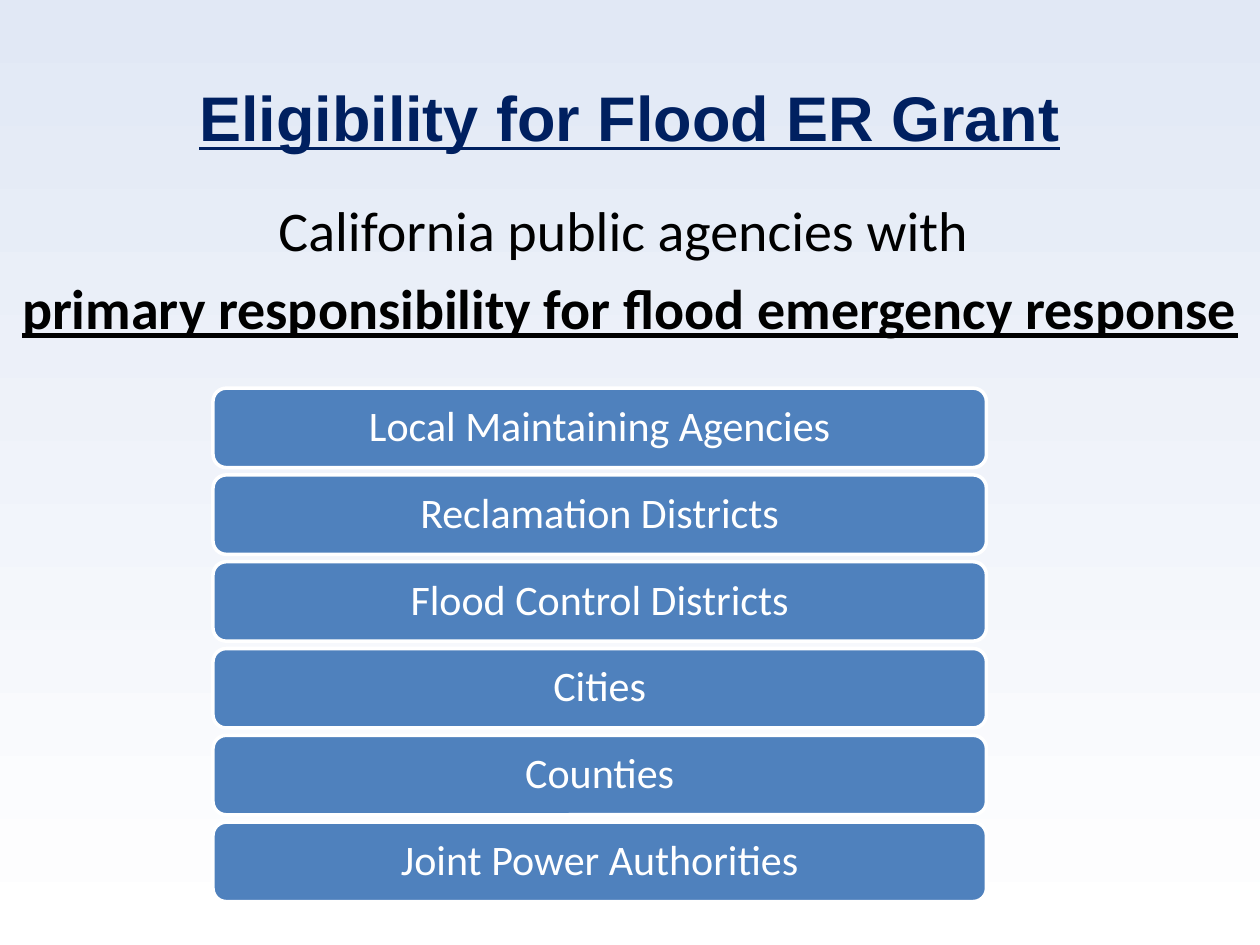
from pptx import Presentation
from pptx.dml.color import RGBColor
from pptx.enum import shapes, text
from pptx.util import Pt


def color(code):
    return RGBColor.from_string(code)


def style(para, font, size, code, bold=False):
    """Centre the paragraph; bold text is also underlined."""
    para.alignment = text.PP_ALIGN.CENTER
    for run in para.runs:
        face = run.font
        face.name, face.size = font, Pt(size)
        face.bold = face.underline = bold
        face.color.rgb = color(code)


deck = Presentation()
deck.slide_width, deck.slide_height = Pt(720), Pt(540)
slide = deck.slides.add_slide(deck.slide_layouts[6])

# Background
back = slide.background.fill
back.gradient()
back.gradient_angle = 270
for stop, code in zip(back.gradient_stops, ("E1E8F5", "FFFFFF")):
    stop.color.rgb = color(code)
    stop.position = 0 if code == "E1E8F5" else 1

# Title
title = slide.shapes.add_textbox(Pt(36), Pt(21.6), Pt(648), Pt(90)).text_frame
title.word_wrap = True
title.vertical_anchor = text.MSO_ANCHOR.MIDDLE
title.text = "Eligibility for Flood ER Grant"
style(title.paragraphs[0], "Arial", 36, "002060", True)

# Introduction
intro = slide.shapes.add_textbox(Pt(0), Pt(108), Pt(720), Pt(120)).text_frame
intro.word_wrap = True
intro.text = ("California public agencies with \n"
              "primary responsibility for flood emergency response")
for para, bold in zip(intro.paragraphs, (False, True)):
    style(para, "Calibri", 32, "000000", bold)
    para.space_before = Pt(6.4)

# Eligible agencies
names = ["Local Maintaining Agencies", "Reclamation Districts",
         "Flood Control Districts", "Cities", "Counties",
         "Joint Power Authorities"]
top, step = 221.8, 49.6
for i, name in enumerate(names):
    bar = slide.shapes.add_shape(shapes.MSO_SHAPE.ROUNDED_RECTANGLE,
                                 Pt(121.7), Pt(top + i * step), Pt(442), Pt(45.4))
    bar.shadow.inherit = False
    bar.fill.solid()
    bar.fill.fore_color.rgb = color("4F81BD")
    bar.line.color.rgb = color("FFFFFF")
    bar.line.width = Pt(2)
    frame = bar.text_frame
    frame.word_wrap = True
    frame.vertical_anchor = text.MSO_ANCHOR.MIDDLE
    frame.margin_top = frame.margin_bottom = Pt(7.2)
    frame.text = name
    para = frame.paragraphs[0]
    para.line_spacing = 0.9
    style(para, "Calibri", 24, "FFFFFF")

deck.save("out.pptx")
